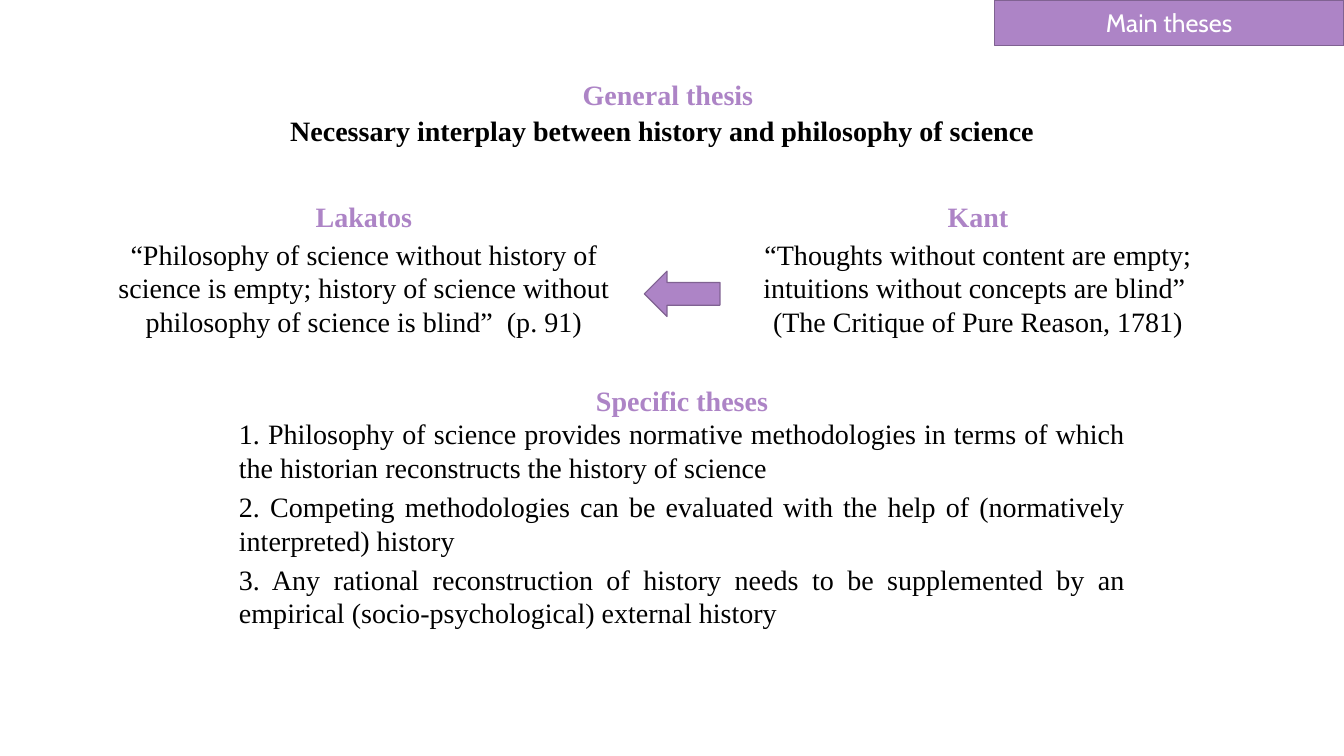
from pptx import Presentation
from pptx.dml.color import RGBColor
from pptx.enum.shapes import MSO_SHAPE
from pptx.enum.text import MSO_ANCHOR, MSO_AUTO_SIZE, PP_ALIGN
from pptx.oxml.ns import qn
from pptx.util import Inches, Pt

# Content
TITLE = "Main theses"
GENERAL_HEADING = "General thesis"
GENERAL_THESIS = "Necessary interplay between history and philosophy of science"
QUOTES = [
    ("Lakatos", ["“Philosophy of science without history of science is empty; "
                 "history of science without philosophy of science is blind”  (p. 91)"]),
    ("Kant", ["“Thoughts without content are empty; intuitions without concepts are blind” ",
              "(The Critique of Pure Reason, 1781)"]),
]
SPECIFIC_HEADING = "Specific theses"
SPECIFIC_THESES = [
    "1. Philosophy of science provides normative methodologies in terms of which "
    "the historian reconstructs the history of science",
    "2. Competing methodologies can be evaluated with the help of "
    "(normatively interpreted) history",
    "3. Any rational reconstruction of history needs to be supplemented by an "
    "empirical (socio-psychological) external history",
]

# Style and layout, in inches
COLORS = {"accent": "AD84C6", "outline": "806292", "text": "000000", "light": "FFFFFF"}
WIDTH, HEIGHT = 13.33, 7.5
TAB_WIDTH, TAB_HEIGHT = 3.47, 0.45
QUOTE_LEFT, QUOTE_STEP, QUOTE_TOP = 0.93, 6.09, 1.93
HEADING = {"color": "accent", "bold": True}


def place(shape, left, top, width, height):
    shape.left, shape.top = Inches(left), Inches(top)
    shape.width, shape.height = Inches(width), Inches(height)


def paint(shape):
    shape.fill.solid()
    shape.fill.fore_color.rgb = RGBColor.from_string(COLORS["accent"])
    shape.line.color.rgb = RGBColor.from_string(COLORS["outline"])
    shape.line.width = Pt(0.85)


def write(frame, text, color="text", size=20, bold=False, font="Times New Roman",
          align=PP_ALIGN.CENTER, after=0):
    """Fill the empty first paragraph, or add a new one."""
    para = frame.paragraphs[0] if not frame.text else frame.add_paragraph()
    para.alignment = align
    para.space_before, para.space_after = Pt(0), Pt(after)
    span = para.add_run()
    span.text = text
    span.font.name, span.font.size, span.font.bold = font, Pt(size), bold
    span.font.color.rgb = RGBColor.from_string(COLORS[color])
    return para


def add_text_box(page, left, top, width, height):
    box = page.shapes.add_textbox(Inches(left), Inches(top), Inches(width), Inches(height))
    box.text_frame.word_wrap = True
    return box.text_frame


deck = Presentation()
deck.slide_width, deck.slide_height = Inches(WIDTH), Inches(HEIGHT)
page = deck.slides.add_slide(deck.slide_layouts[1])

# Title tab in the top right corner
title = page.shapes.title
place(title, WIDTH - TAB_WIDTH, 0, TAB_WIDTH, TAB_HEIGHT)
paint(title)
title.text_frame.auto_size = MSO_AUTO_SIZE.NONE
title.text_frame.vertical_anchor = MSO_ANCHOR.MIDDLE
write(title.text_frame, TITLE, color="light", size=18, font="Cabin")

# General thesis
write(add_text_box(page, 4.5, 0.72, 4.25, 0.44), GENERAL_HEADING, **HEADING)
write(add_text_box(page, 2.78, 1.08, 8.49, 0.44), GENERAL_THESIS, bold=True,
      align=PP_ALIGN.LEFT)

# Two quotations and the arrow between them
for column, (author, lines) in enumerate(QUOTES):
    frame = add_text_box(page, QUOTE_LEFT + column * QUOTE_STEP, QUOTE_TOP, 5.36, 1.52)
    write(frame, author, after=3, **HEADING)
    for line in lines:
        write(frame, line)

arrow = page.shapes.add_shape(MSO_SHAPE.LEFT_ARROW, Inches(6.39), Inches(2.69),
                              Inches(0.75), Inches(0.45))
arrow.shadow.inherit = False
paint(arrow)

# Specific theses
body = page.placeholders[1]
place(body, 2.27, 3.75, 8.99, 2.57)
body.text_frame.auto_size = MSO_AUTO_SIZE.NONE
paras = [write(body.text_frame, SPECIFIC_HEADING, **HEADING)]
paras += [write(body.text_frame, thesis, align=PP_ALIGN.JUSTIFY, after=4)
          for thesis in SPECIFIC_THESES]
for para in paras:
    properties = para._p.get_or_add_pPr()
    properties.set("marL", "0")
    properties.set("indent", "0")
    properties.append(properties.makeelement(qn("a:buNone"), {}))

deck.save("out.pptx")
